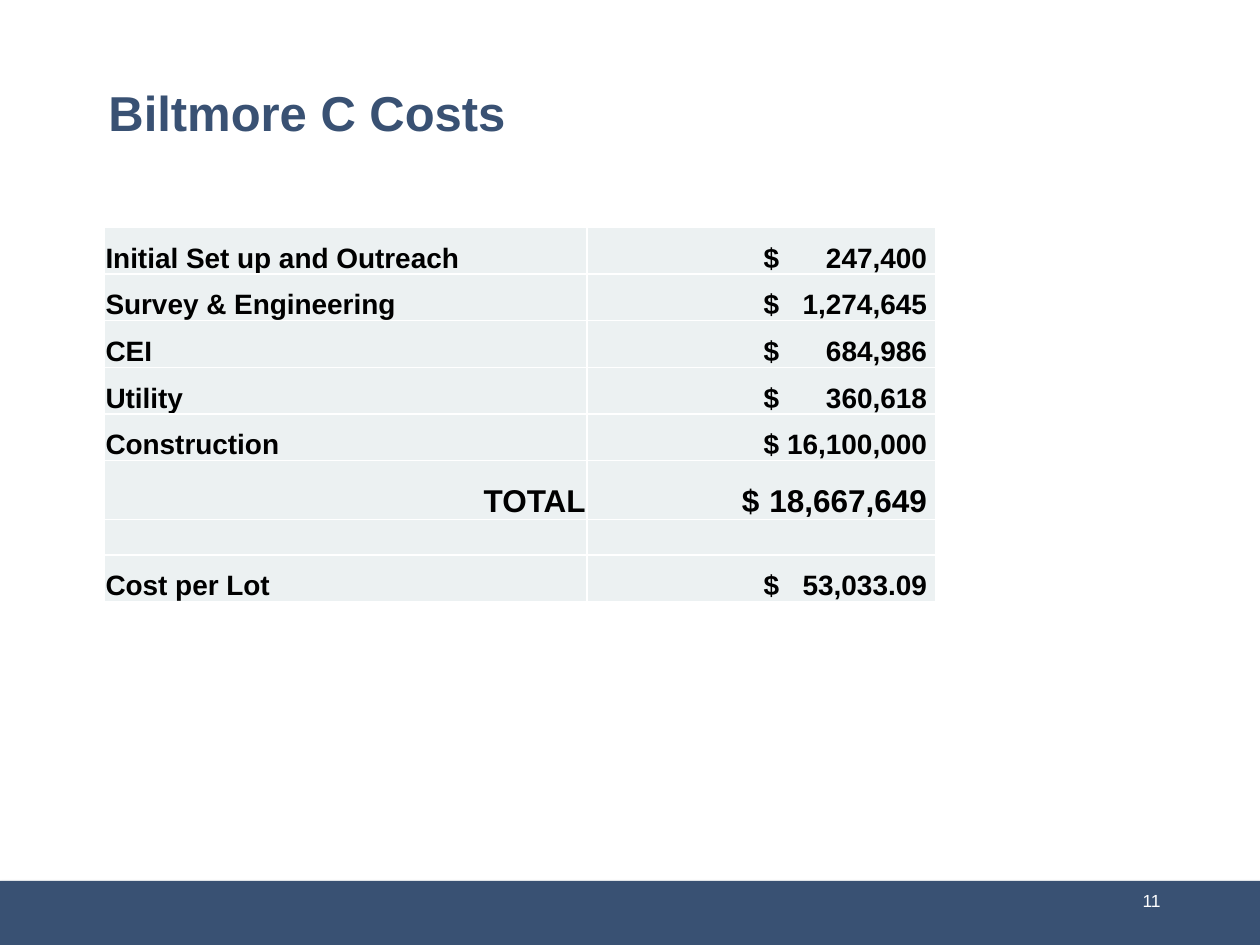
from lxml import etree
from pptx import Presentation
from pptx.dml.color import RGBColor
from pptx.enum.shapes import MSO_SHAPE
from pptx.enum.text import MSO_ANCHOR, PP_ALIGN
from pptx.oxml.ns import qn
from pptx.util import Pt

RECT = MSO_SHAPE.RECTANGLE
MIDDLE, BOTTOM = MSO_ANCHOR.MIDDLE, MSO_ANCHOR.BOTTOM
LEFT, RIGHT = PP_ALIGN.LEFT, PP_ALIGN.RIGHT
NAVY = RGBColor(0x39, 0x51, 0x73)
PALE = RGBColor(0xEC, 0xF1, 0xF2)
WHITE = RGBColor(0xFF, 0xFF, 0xFF)
BLACK = RGBColor(0, 0, 0)
FONT = "Arial"

TITLE = "Biltmore C Costs"
PAGE = "11"
COSTS = [
    ("Initial Set up and Outreach", "247,400"),
    ("Survey & Engineering", "1,274,645"),
    ("CEI", "684,986"),
    ("Utility", "360,618"),
    ("Construction", "16,100,000"),
    ("TOTAL", "18,667,649"),
    ("", ""),
    ("Cost per Lot", "53,033.09"),
]
COL_WIDTHS = (275.8, 199.4)
ROW_H, TOTAL_H, GAP_H = 26.7, 33.6, 20.4
AMOUNT_RIGHT = 194.3
DOLLAR_LEFT, TOTAL_DOLLAR_LEFT = 101, 88.6


def add_text(p, text, size, color, bold=False, align=LEFT):
    p.alignment = align
    r = p.add_run()
    r.text = text
    r.font.name, r.font.size, r.font.bold = FONT, Pt(size), bold
    r.font.color.rgb = color


def add_right_tab(p, pos):
    tabs = etree.SubElement(p._p.get_or_add_pPr(), qn("a:tabLst"))
    etree.SubElement(tabs, qn("a:tab"), pos=str(Pt(pos)), algn="r")


def add_borders(cell):
    tcPr = cell._tc.get_or_add_tcPr()
    for i, side in enumerate(("lnL", "lnR", "lnT", "lnB")):
        ln = etree.Element(qn(f"a:{side}"), w=str(Pt(1)))
        fill = etree.SubElement(ln, qn("a:solidFill"))
        etree.SubElement(fill, qn("a:srgbClr"), val=str(WHITE))
        tcPr.insert(i, ln)


def add_shadow(shape):
    effects = etree.SubElement(shape._element.spPr, qn("a:effectLst"))
    shadow = etree.SubElement(effects, qn("a:outerShdw"), blurRad=str(Pt(3.1)),
                              dist=str(Pt(1.8)), dir="5400000", rotWithShape="0")
    color = etree.SubElement(shadow, qn("a:srgbClr"), val=str(BLACK))
    etree.SubElement(color, qn("a:alpha"), val="35000")


def add_cost_table(s):
    heights = [{"TOTAL": TOTAL_H, "": GAP_H}.get(label, ROW_H) for label, _ in COSTS]
    table = s.shapes.add_table(len(COSTS), 2, Pt(59.6), Pt(129.9),
                               Pt(sum(COL_WIDTHS)), Pt(sum(heights))).table
    table.first_row = table.horz_banding = False
    for col, width in zip(table.columns, COL_WIDTHS):
        col.width = Pt(width)
    for row, height, (label, amount) in zip(table.rows, heights, COSTS):
        row.height = Pt(height)
        total = label == "TOTAL"
        size = 18 if total else 16
        for cell in row.cells:
            cell.margin_left = cell.margin_top = cell.margin_right = Pt(0.7)
            cell.margin_bottom = 0
            cell.vertical_anchor = BOTTOM
            cell.fill.solid()
            cell.fill.fore_color.rgb = PALE
            add_borders(cell)
        name, value = (cell.text_frame.paragraphs[0] for cell in row.cells)
        if not label:
            for p in (name, value):
                etree.SubElement(p._p, qn("a:endParaRPr"), sz="1600")
            continue
        add_text(name, label, size, BLACK, True, RIGHT if total else LEFT)
        left = TOTAL_DOLLAR_LEFT if total else DOLLAR_LEFT
        row.cells[1].margin_left = Pt(left)
        add_right_tab(value, AMOUNT_RIGHT - left)
        add_text(value, f"$\t{amount}", size, BLACK, True)


def main():
    prs = Presentation()
    prs.slide_width, prs.slide_height = Pt(720), Pt(540)
    s = prs.slides.add_slide(prs.slide_layouts[5])

    band = s.shapes.add_shape(RECT, 0, Pt(503.3), Pt(720), Pt(36.7))
    band.fill.solid()
    band.fill.fore_color.rgb = NAVY
    band.line.fill.background()
    add_shadow(band)

    title = s.shapes.title
    title.left, title.top, title.width, title.height = Pt(54.8), Pt(42.8), Pt(610.6), Pt(41.8)
    title.text_frame.vertical_anchor = MIDDLE
    add_text(title.text_frame.paragraphs[0], TITLE, 28, NAVY, True)

    tf = s.shapes.add_textbox(Pt(508.3), Pt(500.4), Pt(162), Pt(28.8)).text_frame
    tf.word_wrap = True
    tf.vertical_anchor = MIDDLE
    add_text(tf.paragraphs[0], PAGE, 10, WHITE, align=RIGHT)

    add_cost_table(s)
    prs.save("out.pptx")


if __name__ == "__main__":
    main()
